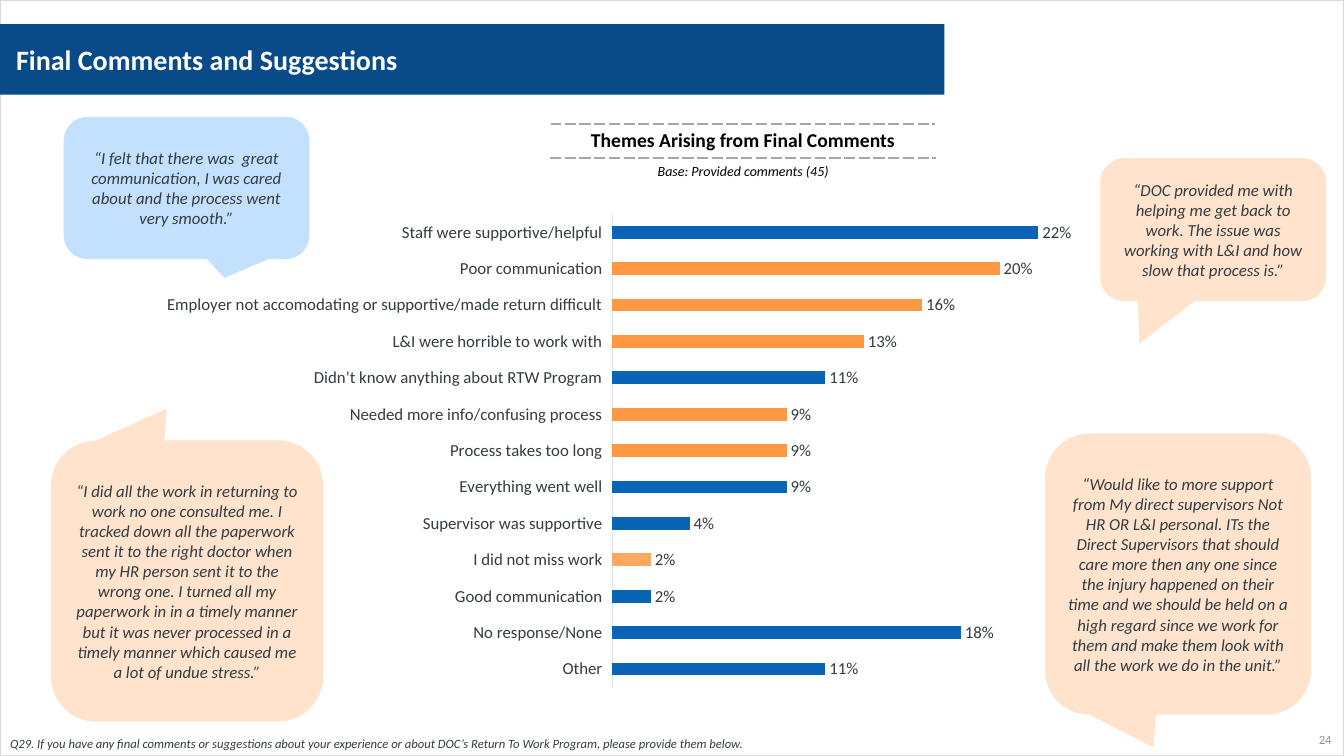
from pptx import Presentation
from pptx.chart.data import CategoryChartData as ChartData
from pptx.dml.color import RGBColor as Rgb
from pptx.enum.chart import XL_CHART_TYPE as Kind, XL_LABEL_POSITION as Spot
from pptx.enum.chart import XL_TICK_LABEL_POSITION as TickPos, XL_TICK_MARK as Tick
from pptx.enum.shapes import MSO_SHAPE as Shape
from pptx.enum.text import MSO_ANCHOR as Anchor, MSO_AUTO_SIZE as Auto, PP_ALIGN as Align
from pptx.oxml import parse_xml
from pptx.oxml.ns import nsdecls
from pptx.util import Pt

COLORS = {
    "navy": "084B88", "blue": "0A64B6", "orange": "FF9843", "peach": "FFA861",
    "sky": "C3E1FC", "cream": "FFE3CC", "ink": "333C42", "black": "000000",
    "white": "FFFFFF", "gray": "909293", "dash": "A6A6A6", "edge": "D9D9D9",
    "axis": "DEE2E5",
}
QUOTE = {"size": Pt(12), "italic": True}

# Theme, percent, bar color
THEMES = [
    ("Staff were supportive/helpful", 22, "blue"),
    ("Poor communication", 20, "orange"),
    ("Employer not accomodating or supportive/made return difficult", 16, "orange"),
    ("L&I were horrible to work with", 13, "orange"),
    ("Didn’t know anything about RTW Program", 11, "blue"),
    ("Needed more info/confusing process", 9, "orange"),
    ("Process takes too long", 9, "orange"),
    ("Everything went well", 9, "blue"),
    ("Supervisor was supportive", 4, "blue"),
    ("I did not miss work", 2, "peach"),
    ("Good communication", 2, "blue"),
    ("No response/None", 18, "blue"),
    ("Other", 11, "blue"),
]

# Box in points, tail offset, fill, words
QUOTES = [
    ((45.5, 83.5, 175.5, 101.5), (0.154, 0.633), "sky",
     "“I felt that there was  great communication, I was cared about and the "
     "process went very smooth.”"),
    ((746.5, 309.6, 190, 200.9), (-0.094, 0.615), "cream",
     "“Would like to more support from My direct supervisors Not HR OR L&I "
     "personal. ITs the Direct Supervisors that should care more then any one "
     "since the injury happened on their time and we should be held on a high "
     "regard since we work for them and make them look with all the work we do "
     "in the unit.”"),
    ((36.5, 314.6, 194.4, 200.9), (-0.075, -0.613), "cream",
     "“I did all the work in returning to work no one consulted me. I tracked "
     "down all the paperwork sent it to the right doctor when my HR person sent "
     "it to the wrong one. I turned all my paperwork in in a timely manner but "
     "it was never processed in a timely manner which caused me a lot of undue "
     "stress.”"),
    ((786, 113, 161.3, 102.2), (-0.328, 0.797), "cream",
     "“DOC provided me with helping me get back to work. The issue was working "
     "with L&I and how slow that process is.”"),
]


def rgb(name):
    return Rgb.from_string(COLORS[name])


def apply(item, values):
    for key, value in values.items():
        setattr(item, key, value)


def style(font, color, values):
    apply(font, {"name": "Calibri", **values})
    font.color.rgb = rgb(color)


def paint(fill, color):
    fill.solid()
    fill.fore_color.rgb = rgb(color)


def place(shape, left, top, width, height):
    apply(shape, {"left": Pt(left), "top": Pt(top),
                  "width": Pt(width), "height": Pt(height)})


def write(frame, text, color, font, align=Align.LEFT, anchor=Anchor.MIDDLE):
    apply(frame, {"word_wrap": True, "auto_size": Auto.NONE,
                  "vertical_anchor": anchor})
    frame.text = text
    para = frame.paragraphs[0]
    apply(para, {"alignment": align, "space_before": Pt(0)})
    style(para.font, color, font)
    return para


def add_frame(slide, width, height):
    edge = slide.shapes.add_shape(Shape.RECTANGLE, 0, 0, width, height)
    edge.shadow.inherit = False
    edge.fill.background()
    edge.line.color.rgb = rgb("edge")
    edge.line.width = Pt(1)
    # Send behind everything else
    edge.element.getparent().insert(2, edge.element)


def add_title(slide):
    title = slide.shapes.title
    place(title, 0, 17.3, 674.6, 50.4)
    paint(title.fill, "navy")
    write(title.text_frame, "Final Comments and Suggestions", "white",
          {"size": Pt(20), "bold": True})
    title.text_frame.margin_left = Pt(11.5)


def add_note(slide):
    note = slide.placeholders[1]
    place(note, 0, 490.3, 887, 49.7)
    para = write(note.text_frame,
                 "Q29. If you have any final comments or suggestions about your "
                 "experience or about DOC’s Return To Work Program, please "
                 "provide them below.",
                 "ink", {"size": Pt(9), "italic": True}, anchor=Anchor.BOTTOM)
    para.space_after = Pt(3)
    props = para._p.get_or_add_pPr()
    props.set("marL", "0")
    props.set("indent", "0")
    props.insert_element_before(parse_xml(f"<a:buNone {nsdecls('a')}/>"),
                                "a:tabLst", "a:defRPr", "a:extLst")


def add_page(slide):
    box = slide.shapes.add_textbox(Pt(930), Pt(519), Pt(28.3), Pt(18.7))
    write(box.text_frame, "24", "gray", {"size": Pt(9)}, Align.RIGHT)


def add_border(cell, side):
    cell._tc.get_or_add_tcPr().append(parse_xml(
        f'<a:{side} {nsdecls("a")} w="{Pt(1.5)}"><a:solidFill>'
        f'<a:srgbClr val="{COLORS["dash"]}"/></a:solidFill>'
        f'<a:prstDash val="sysDash"/></a:{side}>'))


def add_heading(slide):
    table = slide.shapes.add_table(2, 1, Pt(393.3), Pt(88.5), Pt(275), Pt(54)).table
    apply(table, {"first_row": False, "horz_banding": False})
    rows = [
        ("Themes Arising from Final Comments", 24.5,
         {"size": Pt(14), "bold": True}, ("lnT", "lnB")),
        ("Base: Provided comments (45)", 29.5,
         {"size": Pt(10), "italic": True}, ("lnT",)),
    ]
    for row, (text, height, font, sides) in zip(table.rows, rows):
        row.height = Pt(height)
        cell = row.cells[0]
        para = cell.text_frame.paragraphs[0]
        para.text = text
        para.alignment = Align.CENTER
        style(para.font, "black", font)
        for side in sides:
            add_border(cell, side)
        cell.fill.background()


def add_quote(slide, box, tail, color, text):
    shape = slide.shapes.add_shape(Shape.ROUNDED_RECTANGULAR_CALLOUT,
                                   *map(Pt, box))
    shape.shadow.inherit = False
    shape.adjustments[0], shape.adjustments[1] = tail
    paint(shape.fill, color)
    shape.line.fill.background()
    write(shape.text_frame, text, "ink", QUOTE, Align.CENTER)


def add_bars(slide):
    data = ChartData(number_format="0%")
    data.categories = [name for name, _, _ in THEMES]
    data.add_series("Series 1", [share / 100 for _, share, _ in THEMES])
    chart = slide.shapes.add_chart(Kind.BAR_CLUSTERED, Pt(80), Pt(136),
                                   Pt(728), Pt(360), data).chart
    apply(chart, {"has_legend": False, "has_title": False})
    style(chart.font, "ink", {"size": Pt(12)})

    # Axes
    names, scale = chart.category_axis, chart.value_axis
    apply(names, {"reverse_order": True, "major_tick_mark": Tick.NONE,
                  "tick_label_position": TickPos.LOW})
    names.format.line.color.rgb = rgb("axis")
    names.format.line.width = Pt(0.75)
    apply(scale, {"visible": False, "has_major_gridlines": False,
                  "minimum_scale": 0, "maximum_scale": 0.25})

    # Bars and labels
    plot = chart.plots[0]
    apply(plot, {"gap_width": 182, "vary_by_categories": False,
                 "has_data_labels": True})
    apply(plot.data_labels, {"show_value": True, "position": Spot.OUTSIDE_END,
                             "number_format": "0%",
                             "number_format_is_linked": False})
    style(plot.data_labels.font, "ink", {"size": Pt(12)})
    bars = plot.series[0]
    paint(bars.format.fill, "blue")
    for i, (_, _, color) in enumerate(THEMES):
        if color != "blue":
            paint(bars.points[i].format.fill, color)

    # Fixed plot area
    area = chart._chartSpace.chart.plotArea
    for old in area.xpath("c:layout"):
        area.remove(old)
    spots = {"x": 0.491, "y": 0.047, "w": 0.475, "h": 0.939}
    modes = "".join(f'<c:{k}Mode val="edge"/>' for k in "xy")
    sizes = "".join(f'<c:{k} val="{v}"/>' for k, v in spots.items())
    area.insert(0, parse_xml(
        f'<c:layout {nsdecls("c")}><c:manualLayout><c:layoutTarget val="inner"/>'
        f"{modes}{sizes}</c:manualLayout></c:layout>"))


def main():
    deck = Presentation()
    apply(deck, {"slide_width": Pt(960), "slide_height": Pt(540)})
    slide = deck.slides.add_slide(deck.slide_layouts[1])
    add_frame(slide, deck.slide_width, deck.slide_height)
    add_title(slide)
    add_note(slide)
    add_page(slide)
    add_heading(slide)
    for quote in QUOTES:
        add_quote(slide, *quote)
    add_bars(slide)
    deck.save("out.pptx")


if __name__ == "__main__":
    main()
